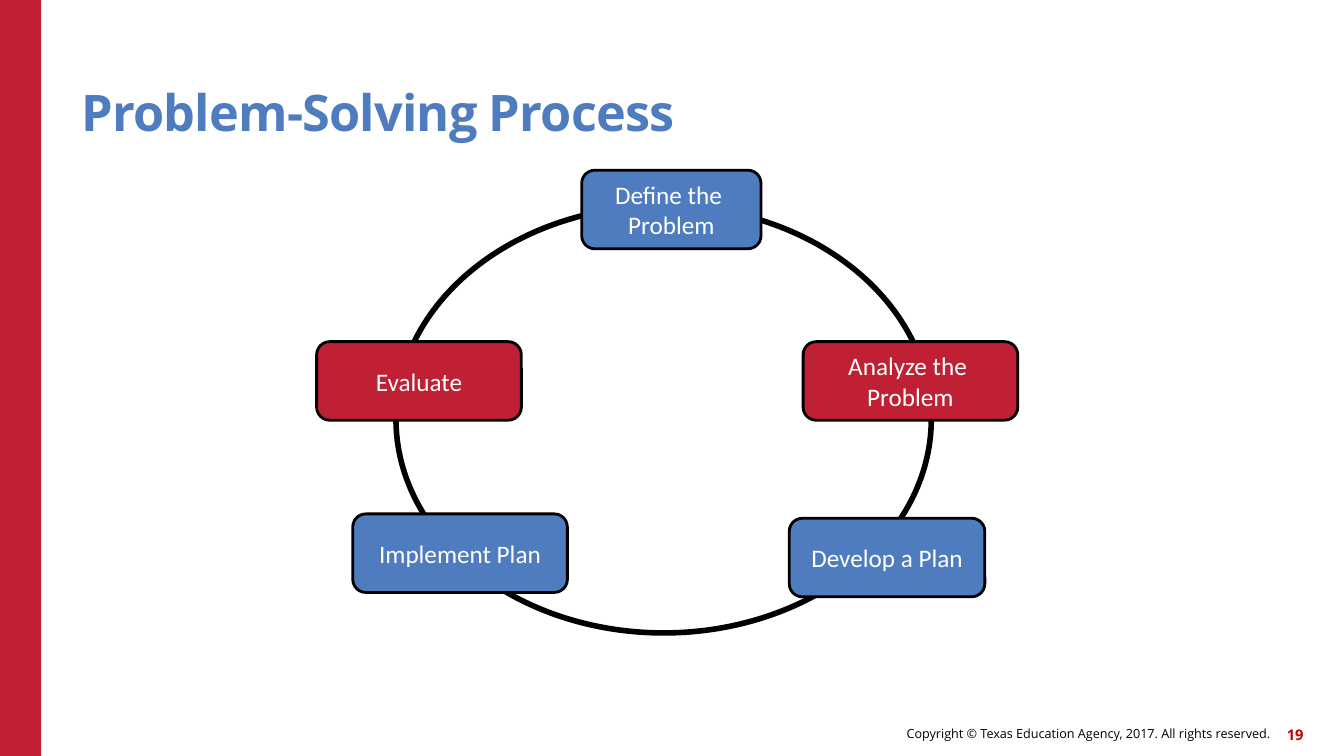
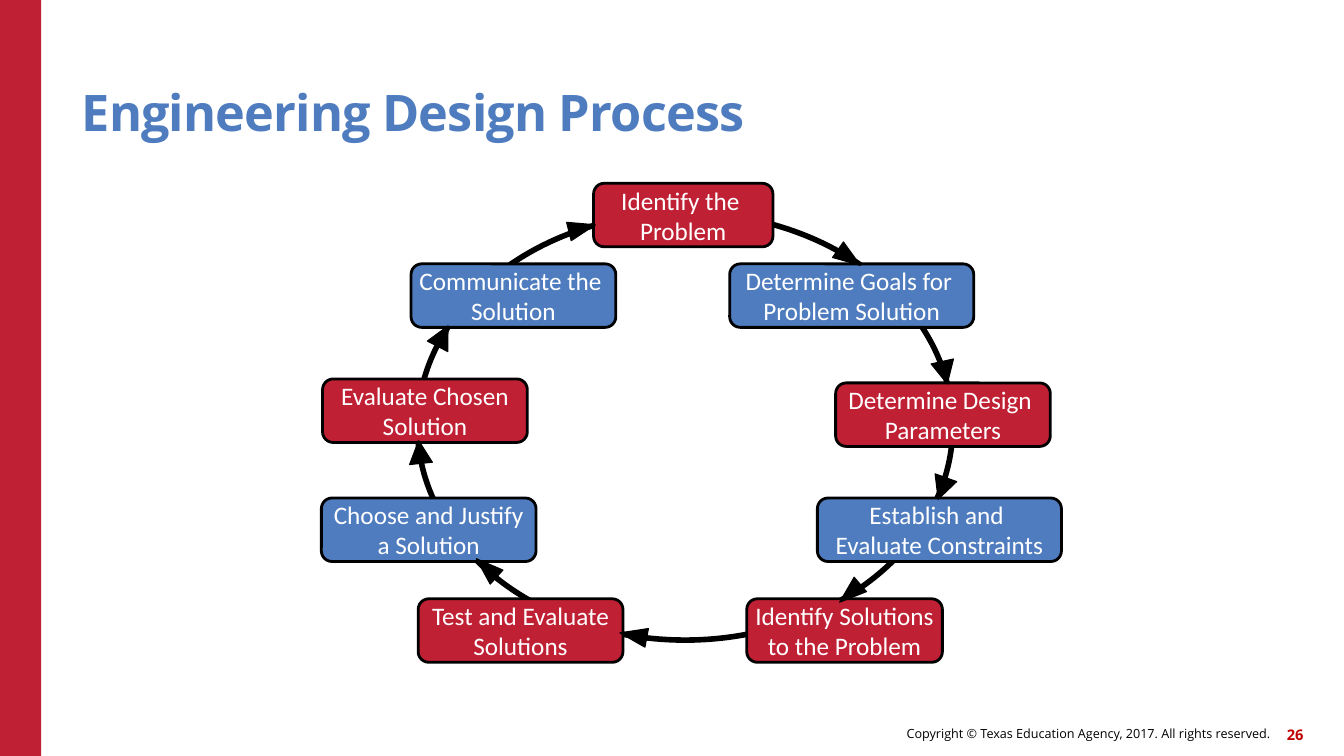
from typing import NamedTuple

from pptx import Presentation
from pptx.dml.color import RGBColor
from pptx.enum.shapes import MSO_SHAPE as Preset
from pptx.enum.text import MSO_ANCHOR as Anchor, PP_ALIGN as Align
from pptx.util import Cm, Pt

RED, BLUE, BLACK, WHITE = "C02033", "4E7CBE", "000000", "FFFFFF"
PAGE_RED = "C00000"
HEAD_FONT, STEP_FONT = "Open Sans", "Calibri"
SLIDE_W, SLIDE_H = 33.87, 19.05
RING_W, RING_H = 13.49, 10.77
SLIM, SQUARE = (0.48, 0.69), (0.58, 0.58)
COPYRIGHT = "Copyright © Texas Education Agency, 2017. All rights reserved."


class Step(NamedTuple):
    lines: str
    left: float
    top: float
    width: float
    fill: str


class ArrowTip(NamedTuple):
    center_x: float
    center_y: float
    turn: float
    size: tuple[float, float] = SLIM


class Cycle(NamedTuple):
    title: str
    page: int
    ring_left: float
    ring_top: float
    step_height: float
    steps: list[Step]
    tips: list[ArrowTip]


# Content, clockwise from the top; lengths in centimetres
CYCLES = [
    Cycle("Problem-Solving Process", 19, 9.98, 5.18, 1.98, [
        Step("Define the \nProblem", 14.66, 4.29, 4.52, BLUE),
        Step("Analyze the \nProblem", 20.24, 8.61, 5.41, RED),
        Step("Develop a Plan", 19.89, 13.06, 4.93, BLUE),
        Step("Implement Plan", 8.89, 12.95, 5.41, BLUE),
        Step("Evaluate", 7.98, 8.61, 5.16, RED),
    ], []),
    Cycle("Engineering Design Process", 26, 10.52, 5.36, 1.6, [
        Step("Identify the \nProblem", 14.96, 4.62, 4.52, RED),
        Step("Determine Goals for \nProblem Solution", 18.39, 6.65, 6.15, BLUE),
        Step("Determine Design \nParameters", 21.06, 9.65, 5.41, RED),
        Step("Establish and \nEvaluate Constraints", 20.6, 12.55, 6.15, BLUE),
        Step("Identify Solutions\nto the Problem", 18.82, 15.09, 4.93, RED),
        Step("Test and Evaluate\nSolutions", 10.54, 15.09, 5.16, RED),
        Step("Choose and Justify\na Solution", 8.1, 12.55, 5.41, BLUE),
        Step("Evaluate Chosen\nSolution", 8.13, 9.55, 5.16, RED),
        Step("Communicate the \nSolution", 10.36, 6.65, 5.16, BLUE),
    ], [
        ArrowTip(21.4, 6.49, 125),
        ArrowTip(23.81, 9.39, 167.4, SQUARE),
        ArrowTip(23.74, 12.31, 199.8, SQUARE),
        ArrowTip(21.42, 14.95, 229.3),
        ArrowTip(15.96, 16.01, 280.5),
        ArrowTip(12.26, 14.31, 312.3),
        ArrowTip(10.58, 11.39, 354.2, SQUARE),
        ArrowTip(11.16, 8.47, 27.3, SQUARE),
        ArrowTip(14.67, 5.75, 75.8),
    ]),
]


def color(hex_code: str) -> RGBColor:
    return RGBColor.from_string(hex_code)


def write(frame, text: str, *, size: float, ink: str, font: str = HEAD_FONT,
          bold: bool = False, align=Align.LEFT, anchor=Anchor.MIDDLE,
          wrap: bool = True, inset: float | None = 0,
          line_spacing: float | None = None, tracking: float = 0) -> None:
    """Fill a text frame, one paragraph for each line of text."""
    frame.word_wrap = wrap
    frame.vertical_anchor = anchor
    if inset is not None:
        frame.margin_left = frame.margin_right = Cm(inset)
        frame.margin_top = frame.margin_bottom = Cm(inset)
    for index, line in enumerate(text.split("\n")):
        paragraph = frame.add_paragraph() if index else frame.paragraphs[0]
        paragraph.alignment = align
        paragraph.line_spacing = line_spacing
        run = paragraph.add_run()
        run.text = line
        run.font.name, run.font.size, run.font.bold = font, Pt(size), bold
        run.font.color.rgb = color(ink)
        if tracking:
            run._r.get_or_add_rPr().set("spc", str(round(tracking * 100)))


def add_label(slide, text: str, left: float, top: float, width: float,
              height: float, **text_format) -> None:
    label = slide.shapes.add_textbox(Cm(left), Cm(top), Cm(width), Cm(height))
    write(label.text_frame, text, **text_format)


def add_preset(slide, preset, left: float, top: float, width: float,
               height: float, fill: str | None = None, line_width: float = 0):
    shape = slide.shapes.add_shape(preset, Cm(left), Cm(top), Cm(width), Cm(height))
    shape.shadow.inherit = False
    if fill:
        shape.fill.solid()
        shape.fill.fore_color.rgb = color(fill)
    else:
        shape.fill.background()
    if line_width:
        shape.line.color.rgb = color(BLACK)
        shape.line.width = Pt(line_width)
    else:
        shape.line.fill.background()
    return shape


def add_frame(slide, title: str, page: int) -> None:
    """Side band, footer and title shared by all slides."""
    add_preset(slide, Preset.RECTANGLE, 0, 0, 1.04, SLIDE_H, RED)
    add_label(slide, COPYRIGHT, 15.6, 18.08, 16.41, 0.81,
              size=9, ink=BLACK, align=Align.RIGHT)
    add_label(slide, str(page), 31.78, 18.11, 1.07, 0.81,
              size=10.5, ink=PAGE_RED, bold=True, align=Align.RIGHT)
    add_label(slide, title, 2.06, 1.14, 27.94, 2.44, size=36, ink=BLUE, bold=True,
              anchor=Anchor.BOTTOM, line_spacing=0.9, tracking=-0.6)


def add_step(slide, step: Step, height: float) -> None:
    box = add_preset(slide, Preset.ROUNDED_RECTANGLE, step.left, step.top,
                     step.width, height, step.fill, 2)
    write(box.text_frame, step.lines, size=18, ink=WHITE, font=STEP_FONT,
          align=Align.CENTER, wrap=False, inset=None)


def add_tip(slide, tip: ArrowTip) -> None:
    width, height = tip.size
    triangle = add_preset(slide, Preset.ISOSCELES_TRIANGLE, tip.center_x - width / 2,
                          tip.center_y - height / 2, width, height, BLACK, 0.75)
    triangle.rotation = tip.turn


def add_cycle(slide, cycle: Cycle) -> None:
    add_frame(slide, cycle.title, cycle.page)
    add_preset(slide, Preset.OVAL, cycle.ring_left, cycle.ring_top,
               RING_W, RING_H, line_width=4)
    for step in cycle.steps:
        add_step(slide, step, cycle.step_height)
    for tip in cycle.tips:
        add_tip(slide, tip)


def main() -> None:
    deck = Presentation()
    deck.slide_width, deck.slide_height = Cm(SLIDE_W), Cm(SLIDE_H)
    blank = deck.slide_layouts[6]
    for cycle in CYCLES:
        add_cycle(deck.slides.add_slide(blank), cycle)
    deck.save("out.pptx")


if __name__ == "__main__":
    main()
